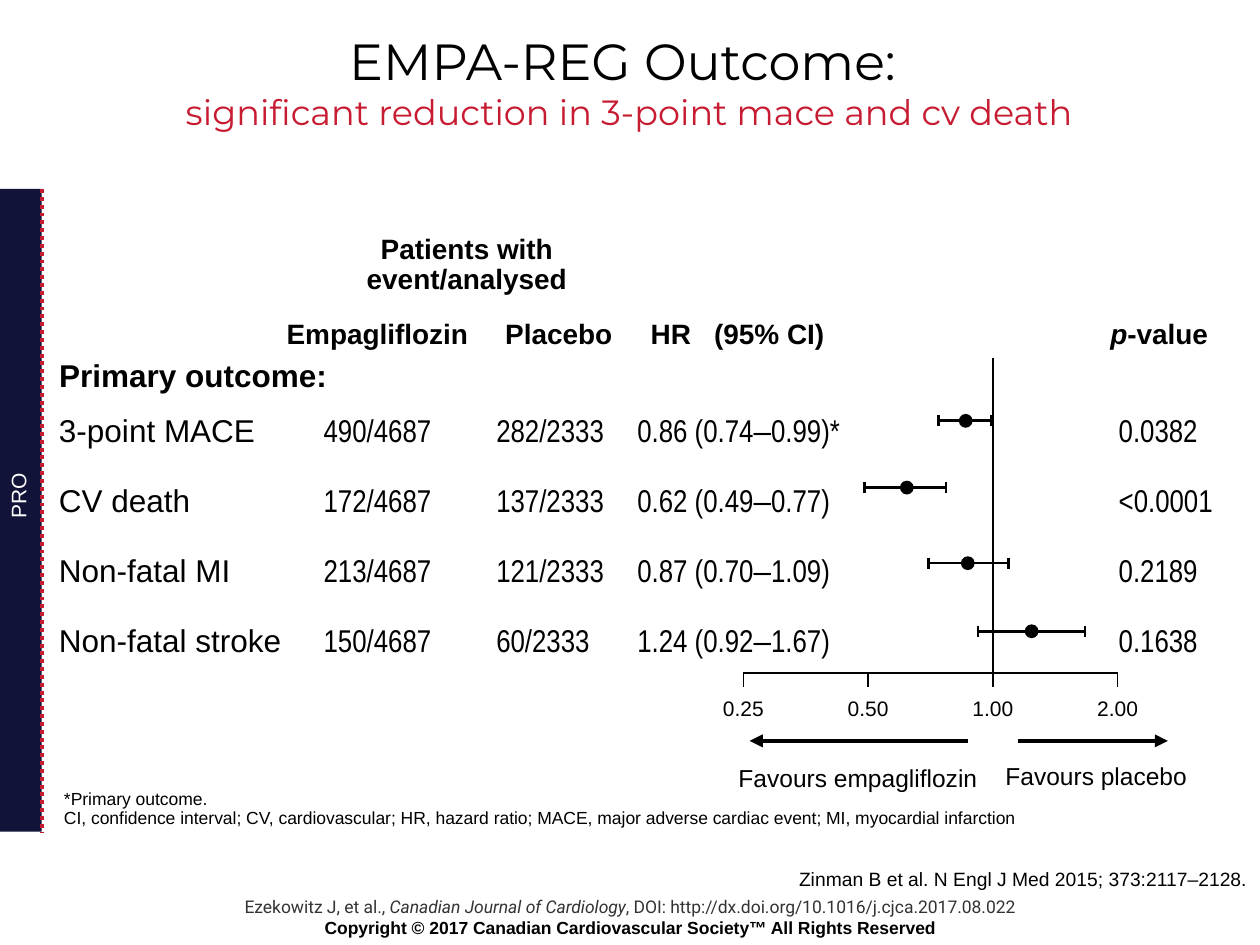
from copy import deepcopy
from dataclasses import dataclass
from math import log2
from typing import Any, NamedTuple

from lxml import etree
from pptx import Presentation
from pptx.dml.color import RGBColor
from pptx.enum.dml import MSO_LINE
from pptx.enum.shapes import MSO_CONNECTOR, MSO_SHAPE
from pptx.enum.text import MSO_ANCHOR, MSO_AUTO_SIZE, PP_ALIGN
from pptx.oxml.ns import qn
from pptx.util import Inches, Pt

LEFT, CENTER, RIGHT = PP_ALIGN.LEFT, PP_ALIGN.CENTER, PP_ALIGN.RIGHT
TOP, MIDDLE, BOTTOM = MSO_ANCHOR.TOP, MSO_ANCHOR.MIDDLE, MSO_ANCHOR.BOTTOM
GROW, FIXED = MSO_AUTO_SIZE.SHAPE_TO_FIT_TEXT, MSO_AUTO_SIZE.NONE
STRAIGHT, OVAL, RECTANGLE = MSO_CONNECTOR.STRAIGHT, MSO_SHAPE.OVAL, MSO_SHAPE.RECTANGLE
DOTTED = MSO_LINE.ROUND_DOT

COLORS = {"black": "000000", "grey": "333333", "red": "C71B32", "navy": "111338", "white": "FFFFFF"}
SLIDE_WIDTH, SLIDE_HEIGHT = Inches(10), Inches(7.5)
COLUMNS, ROWS = 100, 75
UNITY_COLUMN, DOUBLING, AXIS_ROW, TICK = 78.8, 9.9, 53.4, 1.1
CAP, DOT = 0.9, 1.1
LIST_TOP, LIST_HEIGHT, LIST_SPACING = 29.6, 22.6, 1.85
HEADING_ROW, HEADING_HEIGHT, LABEL_SPACING = 24.2, 3.6, 1.35


class Box(NamedTuple):
    """A rectangle in grid columns and rows."""
    left: float
    top: float
    width: float
    height: float


class Run(NamedTuple):
    """A piece of text with the format values that differ from its label."""
    text: str
    changes: dict[str, Any] = {}


class Outcome(NamedTuple):
    """One row of the forest plot."""
    name: str
    empagliflozin: str
    placebo: str
    ratio: float
    low: float
    high: float
    mark: str
    p_value: str
    row: float


@dataclass
class Label:
    """A text box with one paragraph per list of runs."""
    box: Box
    paragraphs: list[list[Run]]
    size: float
    name: str = "Arial"
    color: str = "black"
    bold: bool = False
    align: Any = CENTER
    spacing: float = 1.0
    inset: bool = False
    wrap: bool = True
    anchor: Any = TOP
    auto_size: Any = GROW
    rotation: int = 0


@dataclass
class Rule:
    """A straight line from one grid point to another."""
    start: tuple[float, float]
    end: tuple[float, float]
    width: float = 1
    color: str = "black"
    arrow: bool = False
    dotted: bool = False


OUTCOMES = [
    Outcome("3-point MACE", "490/4687", "282/2333", 0.86, 0.74, 0.99, "*", "0.0382", 33.4),
    Outcome("CV death", "172/4687", "137/2333", 0.62, 0.49, 0.77, "", "<0.0001", 38.7),
    Outcome("Non-fatal MI", "213/4687", "121/2333", 0.87, 0.70, 1.09, "", "0.2189", 44.7),
    Outcome("Non-fatal stroke", "150/4687", "60/2333", 1.24, 0.92, 1.67, "", "0.1638", 50.1),
]
HEADINGS = [
    (22.2, 15.5, [Run("Empagliflozin")]),
    (40.1, 8.5, [Run("Placebo")]),
    (51.6, 3.3, [Run("HR")]),
    (55.7, 10.7, [Run("(95% CI)")]),
    (87.3, 9.4, [Run("p", {"italic": True}), Run("-value")]),
]
NOTES = [
    Label(Box(28, 18.7, 18.1, 4.8), [[Run("Patients with\nevent/analysed")]], 16, bold=True, spacing=0.9),
    Label(Box(4.7, 27.2, 24.9, 3.6), [[Run("Primary outcome:")]], 18, bold=True,
          align=LEFT, spacing=LABEL_SPACING),
    Label(Box(58.1, 59.7, 20, 3.2), [[Run("Favours empagliflozin")]], 14, spacing=LABEL_SPACING),
    Label(Box(78.9, 59.6, 16.2, 3.2), [[Run("Favours placebo")]], 14, spacing=LABEL_SPACING),
    Label(Box(-1.4, 37.8, 5.7, 3), [[Run("PRO")]], 12, color="white", align=LEFT,
          inset=True, wrap=False, rotation=270),
    Label(Box(4.1, 63.5, 80, 2.7), [[Run(
        "*Primary outcome. \nCI, confidence interval; CV, cardiovascular; HR, hazard ratio; "
        "MACE, major adverse cardiac event; MI, myocardial infarction")]], 10, align=LEFT,
        spacing=0.9, inset=True, anchor=BOTTOM, auto_size=FIXED),
    Label(Box(62.1, 68.3, 37.9, 2.9), [[Run("Zinman B et al. N Engl J Med 2015; 373:2117–2128.")]],
          11, align=RIGHT, inset=True, wrap=False),
    Label(Box(11.5, 70.6, 77, 4.4), [
        [Run("Ezekowitz J, et al., "), Run("Canadian Journal of Cardiology", {"italic": True}),
         Run(", DOI: http://dx.doi.org/10.1016/j.cjca.2017.08.022")],
        [Run("Copyright © 2017 Canadian Cardiovascular Society™ All Rights Reserved",
             {"name": "Arial", "color": "black", "bold": True})],
    ], 10, name="Roboto", color="grey", inset=True),
]
TITLE = Label(Box(3, 1.3, 93.9, 10.3), [[
    Run("EMPA-REG Outcome: \n"),
    Run("significant reduction in 3-point mace and cv death", {"size": 20, "color": "red"}),
]], 29, name="Montserrat", inset=True, anchor=MIDDLE, auto_size=FIXED)


def across(columns: float) -> int:
    """Return the length of a number of grid columns."""
    return round(SLIDE_WIDTH * columns / COLUMNS)


def down(rows: float) -> int:
    """Return the length of a number of grid rows."""
    return round(SLIDE_HEIGHT * rows / ROWS)


def place(box: Box) -> tuple[int, int, int, int]:
    """Return the slide lengths of a grid box."""
    return across(box.left), down(box.top), across(box.width), down(box.height)


def ratio_column(ratio: float) -> float:
    """Return the grid column of a hazard ratio on the log axis."""
    return UNITY_COLUMN + DOUBLING * log2(ratio)


def set_values(target: Any, values: dict[str, Any]) -> None:
    """Set each named attribute of an object."""
    for name, value in values.items():
        setattr(target, name, value)


def write_run(paragraph: Any, run: Run, label: Label) -> None:
    """Add a run, with a line break wherever its text has one."""
    values = {"size": label.size, "name": label.name, "bold": label.bold, "color": label.color, **run.changes}
    color = RGBColor.from_string(COLORS[values.pop("color")])
    values["size"] = Pt(values["size"])
    properties = None
    for line in run.text.split("\n"):
        if properties is not None:
            paragraph.add_line_break()
            paragraph._p[-1].append(deepcopy(properties))
        if line:
            piece = paragraph.add_run()
            piece.text = line
            set_values(piece.font, values)
            piece.font.color.rgb = color
            properties = piece._r.rPr


def fill_text(shape: Any, label: Label) -> None:
    """Write a label into a shape."""
    frame = shape.text_frame
    set_values(frame, {"word_wrap": label.wrap, "auto_size": label.auto_size, "vertical_anchor": label.anchor})
    if not label.inset:
        set_values(frame, dict.fromkeys(["margin_left", "margin_top", "margin_right", "margin_bottom"], 0))
    for index, runs in enumerate(label.paragraphs):
        paragraph = frame.add_paragraph() if index else frame.paragraphs[0]
        set_values(paragraph, {"alignment": label.align, "line_spacing": label.spacing})
        for run in runs:
            write_run(paragraph, run, label)


def draw_label(slide: Any, label: Label) -> None:
    """Add a text box."""
    shape = slide.shapes.add_textbox(*place(label.box))
    shape.rotation = label.rotation
    fill_text(shape, label)


def draw_rule(slide: Any, rule: Rule) -> None:
    """Add a line or an arrow."""
    (left, top), (right, bottom) = rule.start, rule.end
    connector = slide.shapes.add_connector(STRAIGHT, across(left), down(top), across(right), down(bottom))
    connector.line.width = Pt(rule.width)
    connector.line.color.rgb = RGBColor.from_string(COLORS[rule.color])
    if rule.dotted:
        connector.line.dash_style = DOTTED
    if rule.arrow:
        etree.SubElement(connector.line._get_or_add_ln(), qn("a:tailEnd"), type="triangle")
    etree.SubElement(connector._element.spPr, qn("a:effectLst"))


def draw_shape(slide: Any, kind: Any, box: Box, color: str) -> None:
    """Add a filled shape without an outline."""
    shape = slide.shapes.add_shape(kind, *place(box))
    shape.shadow.inherit = False
    shape.fill.solid()
    shape.fill.fore_color.rgb = RGBColor.from_string(COLORS[color])
    shape.line.fill.background()


def draw_table_text(slide: Any) -> None:
    """Add the headings and the columns of values."""
    for left, width, runs in HEADINGS:
        draw_label(slide, Label(Box(left, HEADING_ROW, width, HEADING_HEIGHT), [runs], 16,
                                bold=True, spacing=LABEL_SPACING))
    ratios = [[Run(f"{item.ratio:.2f} ({item.low:.2f}"), Run("–", {"name": "Arial"}),
               Run(f"{item.high:.2f}){item.mark}")] for item in OUTCOMES]
    columns = [
        (3.7, 25, "Arial", [[Run(item.name)] for item in OUTCOMES]),
        (24.7, 13.8, "Arial Narrow", [[Run(item.empagliflozin)] for item in OUTCOMES]),
        (38.4, 13.8, "Arial Narrow", [[Run(item.placebo)] for item in OUTCOMES]),
        (49.6, 22.3, "Arial Narrow", ratios),
        (87.8, 11.1, "Arial Narrow", [[Run(item.p_value)] for item in OUTCOMES]),
    ]
    for left, width, name, paragraphs in columns:
        draw_label(slide, Label(Box(left, LIST_TOP, width, LIST_HEIGHT), paragraphs, 18, name=name,
                                align=LEFT, spacing=LIST_SPACING, inset=True))


def draw_forest_plot(slide: Any) -> None:
    """Add the log axis, the intervals and the direction arrows."""
    ticks = [0.25, 0.5, 1, 2]
    draw_rule(slide, Rule((ratio_column(ticks[0]), AXIS_ROW), (ratio_column(ticks[-1]), AXIS_ROW)))
    draw_rule(slide, Rule((UNITY_COLUMN, 28.4), (UNITY_COLUMN, AXIS_ROW)))
    for tick in ticks:
        column = ratio_column(tick)
        draw_rule(slide, Rule((column, AXIS_ROW), (column, AXIS_ROW + TICK)))
        draw_label(slide, Label(Box(column - 2, AXIS_ROW + TICK, 4, 2.4), [[Run(f"{tick:.2f}")]], 12,
                                spacing=LABEL_SPACING))
    for item in OUTCOMES:
        ends = ratio_column(item.low), ratio_column(item.high)
        draw_rule(slide, Rule((ends[0], item.row), (ends[1], item.row), 1.5))
        for end in ends:
            draw_rule(slide, Rule((end, item.row - CAP / 2), (end, item.row + CAP / 2), 1.5))
        draw_shape(slide, OVAL, Box(ratio_column(item.ratio) - DOT / 2, item.row - DOT / 2, DOT, DOT), "black")
    for start, end in [(80.8, 92.7), (76.8, 59.5)]:
        draw_rule(slide, Rule((start, 58.8), (end, 58.8), 2.5, arrow=True))


def main() -> None:
    """Build and save the slide."""
    presentation = Presentation()
    set_values(presentation, {"slide_width": SLIDE_WIDTH, "slide_height": SLIDE_HEIGHT})
    slide = presentation.slides.add_slide(presentation.slide_layouts.get_by_name("Title Only"))
    title = slide.shapes.title
    set_values(title, dict(zip(("left", "top", "width", "height"), place(TITLE.box))))
    fill_text(title, TITLE)
    draw_shape(slide, RECTANGLE, Box(-0.1, 15, 3.4, 51), "navy")
    draw_rule(slide, Rule((3.3, 15), (3.3, 66.1), 2.25, "red", dotted=True))
    draw_table_text(slide)
    draw_forest_plot(slide)
    for note in NOTES:
        draw_label(slide, note)
    presentation.save("out.pptx")


if __name__ == "__main__":
    main()
